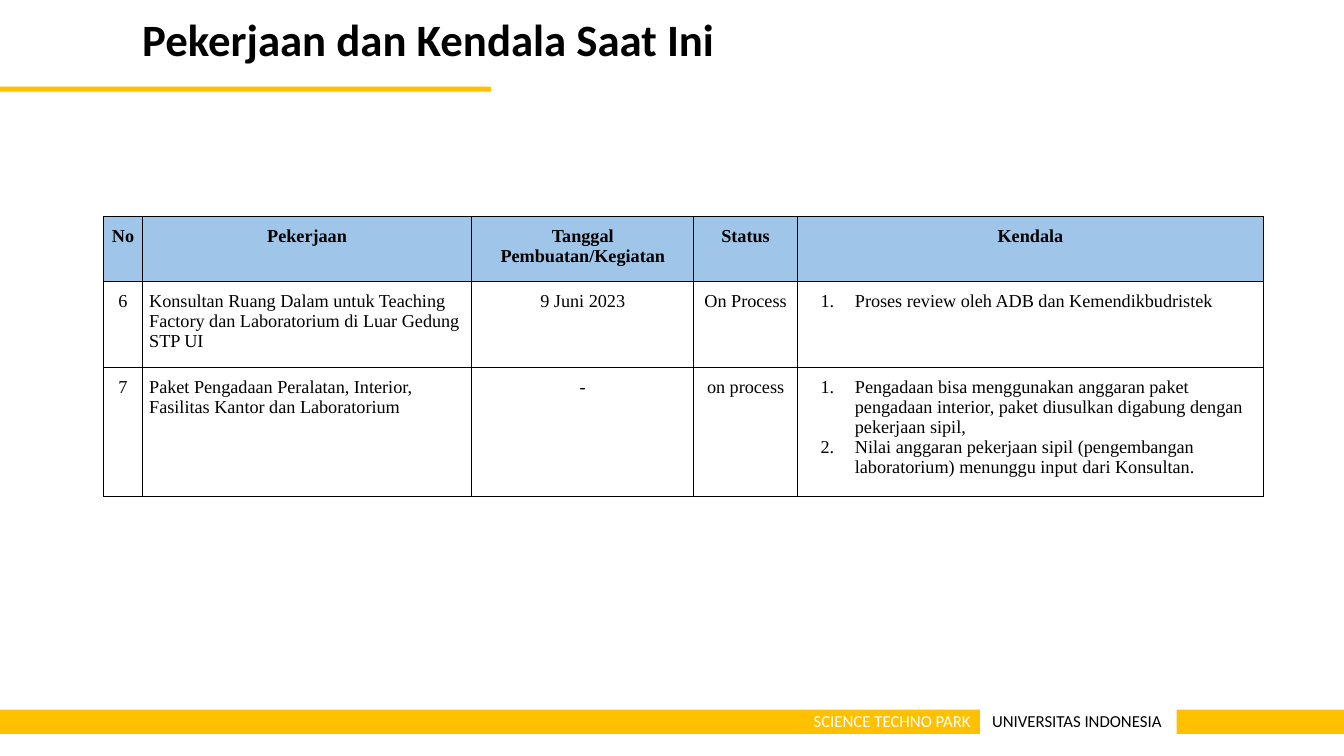
from lxml.etree import SubElement
from pptx import Presentation
from pptx.dml.color import RGBColor
from pptx.enum.shapes import MSO_SHAPE
from pptx.enum.text import PP_ALIGN
from pptx.oxml.ns import qn
from pptx.util import Inches, Pt

GOLD = RGBColor(0xFF, 0xC0, 0x00)
BLUE = RGBColor(0x9F, 0xC5, 0xE8)
BLACK = RGBColor(0, 0, 0)
WHITE = RGBColor(0xFF, 0xFF, 0xFF)

COLUMN_WIDTHS = [0.38, 3.27, 2.2, 1.03, 4.62]
ROW_HEIGHTS = [0.64, 0.85, 1.28]
TASK_COLUMN, ISSUE_COLUMN = 1, 4
ROWS = [
    ["No", "Pekerjaan", "Tanggal Pembuatan/Kegiatan", "Status", "Kendala"],
    ["6", "Konsultan Ruang Dalam untuk Teaching Factory dan Laboratorium di Luar Gedung STP UI",
     "9 Juni 2023", "On Process", ["Proses review oleh ADB dan Kemendikbudristek"]],
    ["7", "Paket Pengadaan Peralatan, Interior, Fasilitas Kantor dan Laboratorium",
     "-", "on process",
     ["Pengadaan bisa menggunakan anggaran paket pengadaan interior, "
      "paket diusulkan digabung dengan pekerjaan sipil,",
      "Nilai anggaran pekerjaan sipil (pengembangan laboratorium) "
      "menunggu input dari Konsultan."]],
]


def add_span(para, text, font, size, color, bold=False):
    span = para.add_run()
    span.text = text
    span.font.name = font
    span.font.size = Pt(size)
    span.font.color.rgb = color
    span.font.bold = bold


def add_band(page, left, top, width, height):
    band = page.shapes.add_shape(MSO_SHAPE.RECTANGLE, Inches(left), Inches(top),
                                 Inches(width), Inches(height))
    band.shadow.inherit = False
    band.fill.solid()
    band.fill.fore_color.rgb = GOLD
    band.line.fill.background()


def add_label(page, left, top, width, height, text, size, color, align=PP_ALIGN.LEFT, bold=False):
    box = page.shapes.add_textbox(Inches(left), Inches(top), Inches(width), Inches(height))
    frame = box.text_frame
    frame.word_wrap = True
    frame.margin_left = frame.margin_right = frame.margin_top = frame.margin_bottom = 0
    para = frame.paragraphs[0]
    para.alignment = align
    add_span(para, text, "Calibri", size, color, bold)


def add_heading(page, left, top):
    add_label(page, left + 1.41, top + 0.12, 10.25, 0.47,
              "Pekerjaan dan Kendala Saat Ini", 32, BLACK, bold=True)
    add_band(page, left, top + 0.86, 4.87, 0.05)


def add_footer(page, left, top):
    add_band(page, left, top, 9.72, 0.24)
    add_band(page, left + 11.67, top, 1.66, 0.24)
    add_label(page, left + 6.17, top + 0.01, 3.46, 0.21, "SCIENCE TECHNO PARK", 12, WHITE,
              PP_ALIGN.RIGHT)
    add_label(page, left + 9.84, top + 0.01, 1.73, 0.21, "UNIVERSITAS INDONESIA", 12, BLACK)


def add_borders(cell):
    properties = cell._tc.get_or_add_tcPr()
    for side in ("a:lnL", "a:lnR", "a:lnT", "a:lnB"):
        line = SubElement(properties, qn(side), w=str(Pt(0.83)))
        fill = SubElement(line, qn("a:solidFill"))
        SubElement(fill, qn("a:srgbClr"), val=str(BLACK))


def add_number(para):
    properties = para._p.get_or_add_pPr()
    properties.set("marL", str(Inches(0.5)))
    properties.set("indent", str(Inches(-0.34)))
    color = SubElement(properties, qn("a:buClr"))
    SubElement(color, qn("a:srgbClr"), val=str(BLACK))
    SubElement(properties, qn("a:buAutoNum"), type="arabicPeriod")


def fill_cell(cell, content, is_header, column):
    cell.margin_left = cell.margin_right = Inches(0.07)
    cell.margin_top = cell.margin_bottom = Inches(0.1)
    add_borders(cell)
    if is_header:
        cell.fill.solid()
        cell.fill.fore_color.rgb = BLUE
    else:
        cell.fill.background()
    numbered = isinstance(content, list)
    frame = cell.text_frame
    for index, text in enumerate(content if numbered else [content]):
        para = frame.add_paragraph() if index else frame.paragraphs[0]
        if numbered:
            add_number(para)
        centred = is_header or column not in (TASK_COLUMN, ISSUE_COLUMN)
        para.alignment = PP_ALIGN.CENTER if centred else PP_ALIGN.LEFT
        add_span(para, text, "Times New Roman", 13, BLACK, is_header)


def add_work_table(page, left, top):
    table = page.shapes.add_table(
        len(ROWS), len(COLUMN_WIDTHS), Inches(left), Inches(top),
        Inches(sum(COLUMN_WIDTHS)), Inches(sum(ROW_HEIGHTS))).table
    table.first_row = table.horz_banding = False
    for column, width in zip(table.columns, COLUMN_WIDTHS):
        column.width = Inches(width)
    for row, height in zip(table.rows, ROW_HEIGHTS):
        row.height = Inches(height)
    for row_index, contents in enumerate(ROWS):
        for column_index, content in enumerate(contents):
            fill_cell(table.cell(row_index, column_index), content, row_index == 0, column_index)


def main():
    deck = Presentation()
    deck.slide_width = Inches(13.33)
    deck.slide_height = Inches(7.5)
    page = deck.slides.add_slide(deck.slide_layouts[6])
    add_heading(page, 0, 0)
    add_footer(page, 0, 7.04)
    add_work_table(page, 1.03, 2.15)
    deck.save("out.pptx")


if __name__ == "__main__":
    main()
